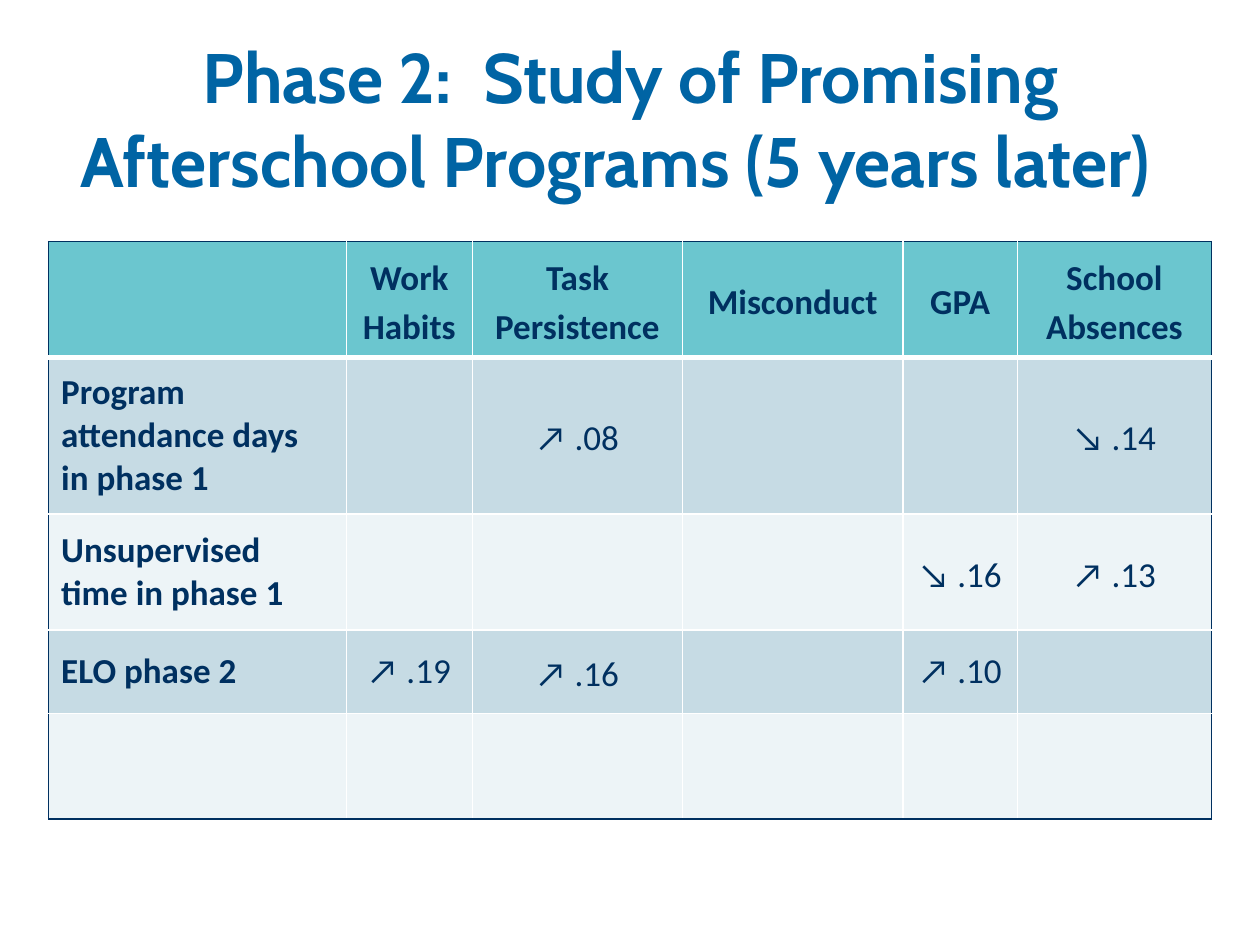
from lxml import etree
from pptx import Presentation
from pptx.dml.color import RGBColor
from pptx.enum.text import MSO_ANCHOR, PP_ALIGN
from pptx.oxml.ns import qn
from pptx.util import Cm, Pt

CENTER, LEFT = PP_ALIGN.CENTER, PP_ALIGN.LEFT
TOP, MIDDLE = MSO_ANCHOR.TOP, MSO_ANCHOR.MIDDLE

BLUE = RGBColor(0x00, 0x64, 0xA4)
NAVY = RGBColor(0x00, 0x30, 0x60)
TEAL = RGBColor(0x6B, 0xC6, 0xCF)
MIST = RGBColor(0xC6, 0xDB, 0xE4)
PALE = RGBColor(0xED, 0xF4, 0xF7)
WHITE = RGBColor(0xFF, 0xFF, 0xFF)

COL_WIDTHS = [6, 2.54, 4.24, 4.44, 2.31, 3.91]
ROW_HEIGHTS = [2.34, 3.15, 2.34, 1.68, 2.13]
ROWS = [
    ["", "Work Habits", "Task Persistence", "Misconduct", "GPA", "School Absences"],
    ["Program attendance days in phase 1", "", "↗ .08", "", "", "↘ .14"],
    ["Unsupervised time in phase 1", "", "", "", "↘ .16", "↗ .13"],
    ["ELO phase 2", "↗ .19", "↗ .16", "", "↗ .10", ""],
    [""] * 6,
]
SINGLE_SPACED = {(3, 1), (3, 4)}


def style_paragraph(p, font, size, color, bold, align):
    p.alignment = align
    p.font.name = font
    p.font.size = Pt(size)
    p.font.color.rgb = color
    p.font.bold = bold


def add_title(s, text):
    tf = s.shapes.add_textbox(Cm(1.07), Cm(0.56), Cm(23.29), Cm(4.34)).text_frame
    tf.word_wrap = True
    tf.vertical_anchor = TOP
    p = tf.paragraphs[0]
    p.text = text
    style_paragraph(p, "Cabin", 40, BLUE, True, CENTER)


def add_border(cell, side, color, width):
    ln = etree.SubElement(cell._tc.get_or_add_tcPr(), qn(f"a:ln{side}"), w=str(Pt(width)))
    fill = etree.SubElement(ln, qn("a:solidFill"))
    etree.SubElement(fill, qn("a:srgbClr"), val=str(color))


def set_borders(cell, row, col):
    last_row, last_col = len(ROWS) - 1, len(COL_WIDTHS) - 1
    outer = {"L": col == 0, "R": col == last_col, "T": row == 0, "B": row == last_row}
    for side, is_outer in outer.items():
        under_header = (row, side) in ((0, "B"), (1, "T"))
        add_border(cell, side, NAVY if is_outer else WHITE, 3 if under_header else 1)


def fill_cell(cell, text, row, col):
    set_borders(cell, row, col)
    cell.fill.solid()
    cell.fill.fore_color.rgb = TEAL if row == 0 else MIST if row % 2 else PALE
    cell.vertical_anchor = MIDDLE
    if not text:
        return
    p = cell.text_frame.paragraphs[0]
    p.text = text
    style_paragraph(p, "Calibri", 20, NAVY, row == 0 or col == 0, CENTER if col else LEFT)
    if col and (row, col) not in SINGLE_SPACED:
        p.line_spacing = 1.15
        cell.margin_left = cell.margin_right = Cm(0.18)
        cell.margin_top = cell.margin_bottom = 0


def add_results_table(s):
    table = s.shapes.add_table(
        len(ROWS), len(COL_WIDTHS), Cm(0.98), Cm(4.87),
        Cm(sum(COL_WIDTHS)), Cm(sum(ROW_HEIGHTS)),
    ).table
    for column, width in zip(table.columns, COL_WIDTHS):
        column.width = Cm(width)
    for table_row, height in zip(table.rows, ROW_HEIGHTS):
        table_row.height = Cm(height)
    for row, texts in enumerate(ROWS):
        for col, text in enumerate(texts):
            fill_cell(table.cell(row, col), text, row, col)


def main():
    prs = Presentation()
    prs.slide_width, prs.slide_height = Cm(25.4), Cm(19.05)
    s = prs.slides.add_slide(prs.slide_layouts[6])
    add_title(s, "Phase 2:  Study of Promising Afterschool Programs (5 years later)  ")
    add_results_table(s)
    prs.save("out.pptx")


if __name__ == "__main__":
    main()
